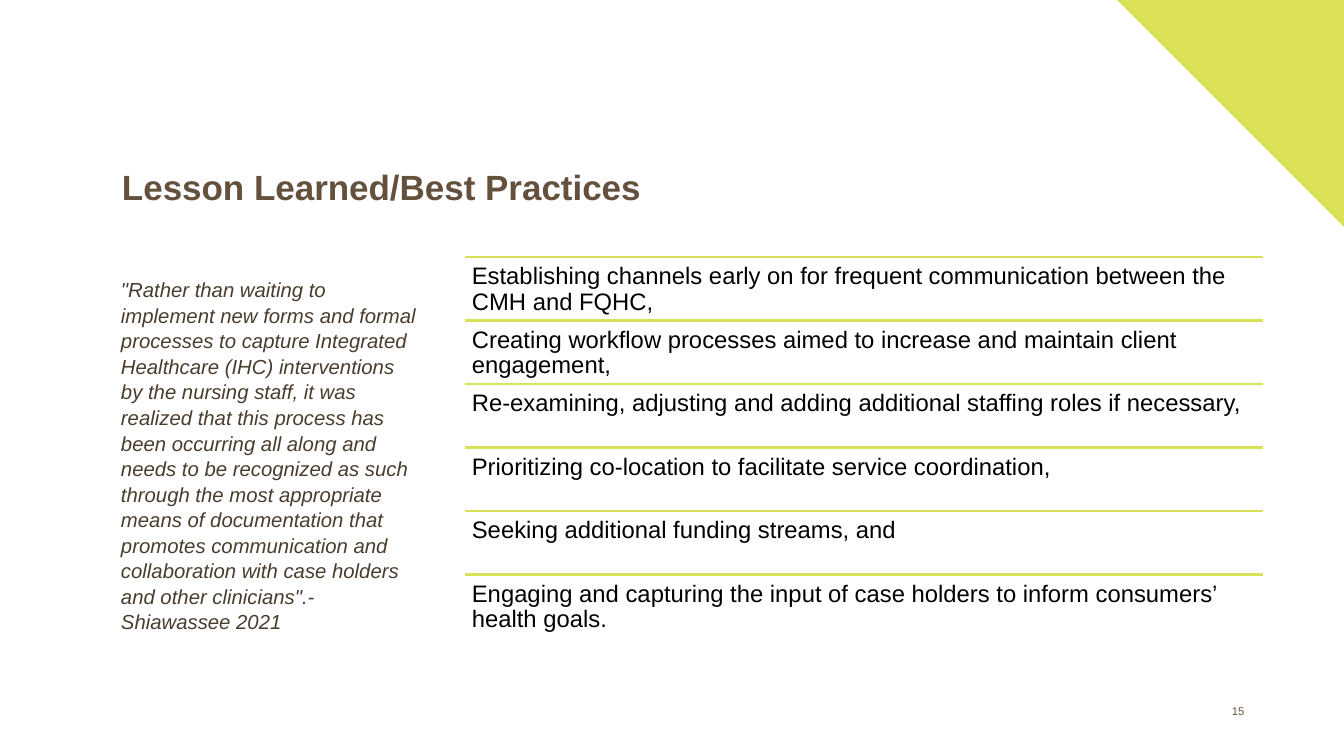
from dataclasses import dataclass

from lxml import etree
from pptx import Presentation
from pptx.dml.color import RGBColor
from pptx.enum.shapes import MSO_CONNECTOR, MSO_SHAPE
from pptx.enum.text import MSO_ANCHOR, MSO_AUTO_SIZE, PP_ALIGN
from pptx.oxml.ns import qn
from pptx.util import Inches, Pt

LEFT, RIGHT = PP_ALIGN.LEFT, PP_ALIGN.RIGHT
TOP, MIDDLE = MSO_ANCHOR.TOP, MSO_ANCHOR.MIDDLE
FIXED = MSO_AUTO_SIZE.NONE
LINE, CORNER = MSO_CONNECTOR.STRAIGHT, MSO_SHAPE.RIGHT_TRIANGLE


@dataclass(frozen=True)
class Theme:
    font: str = "Arial"
    lime: RGBColor = RGBColor(0xDA, 0xE1, 0x59)
    brown: RGBColor = RGBColor(0x63, 0x51, 0x3D)
    dark: RGBColor = RGBColor(0x4A, 0x3D, 0x2E)
    black: RGBColor = RGBColor(0, 0, 0)
    title: Pt = Pt(25)
    quote: Pt = Pt(14.5)
    item: Pt = Pt(17)
    number: Pt = Pt(8)
    rule: Pt = Pt(2)


THEME = Theme()

QUOTE = (
    '"Rather than waiting to implement new forms and formal processes to '
    "capture Integrated Healthcare (IHC) interventions by the nursing staff, "
    "it was realized that this process has been occurring all along and needs "
    "to be recognized as such through the most appropriate means of "
    "documentation that promotes communication and collaboration with case "
    'holders and other clinicians".- Shiawassee 2021'
)
ITEMS = [
    "Establishing channels early on for frequent communication between the CMH and FQHC,",
    "Creating workflow processes aimed to increase and maintain client engagement,",
    "Re-examining, adjusting and adding additional staffing roles if necessary,",
    "Prioritizing co-location to facilitate service coordination,",
    "Seeking additional funding streams, and",
    "Engaging and capturing the input of case holders to inform consumers’ health goals.",
]
LIST_X, LIST_Y, LIST_W, ROW_H = 4.61, 2.55, 7.92, 0.63


def assign(target, values):
    for name, value in values.items():
        setattr(target, name, value)


def place(shape, x, y, w, h):
    assign(shape, {"left": Inches(x), "top": Inches(y),
                   "width": Inches(w), "height": Inches(h)})


def write(shape, text, size, color, align=LEFT, spacing=0.9, frame=None, **style):
    """Fill a text shape with one formatted paragraph."""
    body = shape.text_frame
    body.text = text
    assign(body, {"word_wrap": True, "auto_size": FIXED,
                  "vertical_anchor": TOP, **(frame or {})})
    para = body.paragraphs[0]
    assign(para, {"alignment": align, "line_spacing": spacing,
                  "space_before": Pt(0)})
    font = para.runs[0].font
    assign(font, {"name": THEME.font, "size": size, **style})
    font.color.rgb = color


def clear_bullet(shape):
    props = shape.text_frame.paragraphs[0]._p.get_or_add_pPr()
    props.set("marL", "0")
    props.set("indent", "0")
    etree.SubElement(props, qn("a:buNone"))


def add_box(slide, x, y, w, h):
    return slide.shapes.add_textbox(Inches(x), Inches(y), Inches(w), Inches(h))


def add_corner(slide, x, y, side):
    shape = slide.shapes.add_shape(
        CORNER, Inches(x), Inches(y), Inches(side), Inches(side))
    shape.rotation = 180
    shape.shadow.inherit = False
    shape.fill.solid()
    shape.fill.fore_color.rgb = THEME.lime
    shape.line.fill.background()


def add_rule(slide, x, y, w):
    rule = slide.shapes.add_connector(
        LINE, Inches(x), Inches(y), Inches(x + w), Inches(y))
    rule.line.color.rgb = THEME.lime
    rule.line.width = THEME.rule
    etree.SubElement(rule._element.spPr, qn("a:effectLst"))


def add_item(slide, row, text):
    y = LIST_Y + row * ROW_H
    add_rule(slide, LIST_X, y, LIST_W)
    inset = Inches(0.07)
    sides = ("left", "top", "right", "bottom")
    write(add_box(slide, LIST_X, y, LIST_W, ROW_H), text, THEME.item, THEME.black,
          frame={f"margin_{side}": inset for side in sides})


def main():
    deck = Presentation()
    assign(deck, {"slide_width": Inches(13.33), "slide_height": Inches(7.5)})
    slide = deck.slides.add_slide(deck.slide_layouts[1])

    # Corner accent
    add_corner(slide, 11.08, 0, 2.25)

    # Title, raised within its box by the bottom margin
    title = slide.shapes.title
    place(title, 1.11, 1.63, 10.66, 0.85)
    write(title, "Lesson Learned/Best Practices", THEME.title, THEME.brown,
          frame={"vertical_anchor": MIDDLE, "margin_bottom": Inches(0.41)},
          bold=True)

    # Quote
    quote = slide.placeholders[1]
    place(quote, 1.1, 2.69, 3.15, 3.71)
    write(quote, QUOTE, THEME.quote, THEME.dark, spacing=1.05, italic=True)
    clear_bullet(quote)

    # Ruled list of practices
    for row, text in enumerate(ITEMS):
        add_item(slide, row, text)

    # Slide number
    write(add_box(slide, 9.44, 6.95, 3, 0.23), "15", THEME.number, THEME.brown,
          align=RIGHT, frame={"vertical_anchor": MIDDLE})

    deck.save("out.pptx")


if __name__ == "__main__":
    main()
